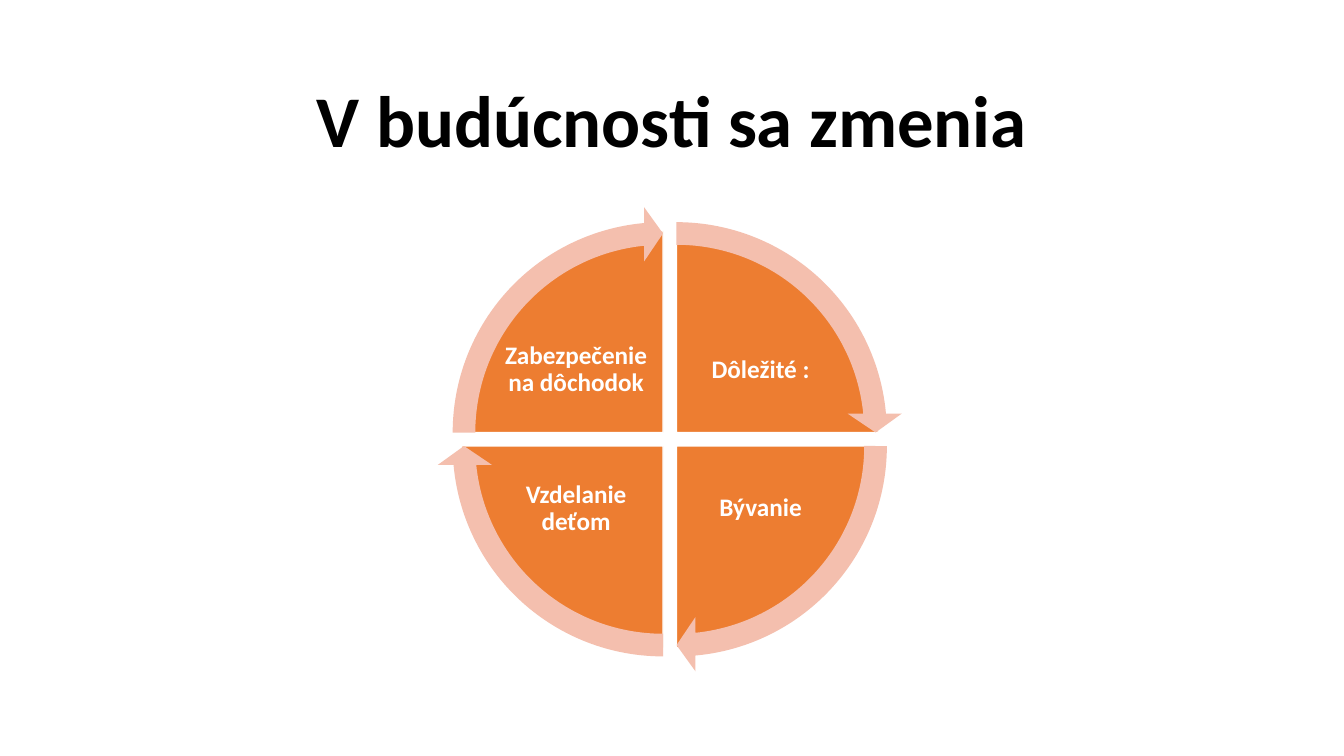
"""Builds a slide with a four-part cycle of future needs."""
from pptx import Presentation
from pptx import util as u
from pptx.dml.color import RGBColor
from pptx.enum import shapes, text

TITLE = "V budúcnosti sa zmenia"
QUARTERS = [
    ("Dôležité : ", 1, -1),
    ("Bývanie ", 1, 1),
    ("Vzdelanie deťom", -1, 1),
    ("Zabezpečenie na dôchodok", -1, -1),
]

FONT = "Calibri"
BLACK = RGBColor(0x00, 0x00, 0x00)
WHITE = RGBColor(0xFF, 0xFF, 0xFF)
ORANGE = RGBColor(0xED, 0x7D, 0x31)
PEACH = RGBColor(0xF4, 0xBF, 0xAE)

CENTER_X, CENTER_Y = 16.88, 11.07
GAP = 0.17
PIE_SIZE, ARROW_SIZE = 10.16, 11.4
LABEL_WIDTH, LABEL_HEIGHT = 3.76, 2.77
LABEL_DX, LABEL_DY = 2.36, 1.75
LABEL_INSET = 0.08
FULL_TURN, QUARTER_TURN, TOP = 216, 54, 162
ARROW_SWEEP = 50.72


def centered_box(x, y, width, height):
    return [u.Cm(v) for v in (x - width / 2, y - height / 2, width, height)]


def add_text(slide, box, wording, size, color, inset=None):
    frame = slide.shapes.add_textbox(*box).text_frame
    frame.word_wrap = True
    frame.vertical_anchor = text.MSO_ANCHOR.MIDDLE
    if inset is not None:
        frame.margin_left = frame.margin_right = u.Cm(inset)
        frame.margin_top = frame.margin_bottom = u.Cm(inset)
    paragraph = frame.paragraphs[0]
    paragraph.alignment = text.PP_ALIGN.CENTER
    paragraph.line_spacing = 0.9
    run = paragraph.add_run()
    run.text = wording
    run.font.name = FONT
    run.font.size = u.Pt(size)
    run.font.bold = True
    run.font.color.rgb = color


def add_round(slide, kind, x, y, size, color, adjustments):
    shape = slide.shapes.add_shape(kind, *centered_box(x, y, size, size))
    shape.shadow.inherit = False
    shape.fill.solid()
    shape.fill.fore_color.rgb = color
    for index, value in enumerate(adjustments):
        shape.adjustments[index] = value
    return shape


def main():
    presentation = Presentation()
    presentation.slide_width, presentation.slide_height = u.Cm(33.87), u.Cm(19.05)
    slide = presentation.slides.add_slide(presentation.slide_layouts[6])
    title_box = [u.Cm(v) for v in (2.33, 1.55, 29.21, 3.15)]
    add_text(slide, title_box, TITLE, 52, BLACK)

    arrows = []
    for index, (label, side_x, side_y) in enumerate(QUARTERS):
        start = (TOP + index * QUARTER_TURN) % FULL_TURN
        end = (start + QUARTER_TURN) % FULL_TURN
        x, y = CENTER_X + side_x * GAP, CENTER_Y + side_y * GAP
        pie = add_round(slide, shapes.MSO_SHAPE.PIE, x, y, PIE_SIZE, ORANGE, (start, end))
        pie.line.color.rgb = WHITE
        pie.line.width = u.Pt(1)
        label_box = centered_box(CENTER_X + side_x * LABEL_DX, CENTER_Y + side_y * LABEL_DY,
                                 LABEL_WIDTH, LABEL_HEIGHT)
        add_text(slide, label_box, label, 18, WHITE, LABEL_INSET)
        arrows.append((x, y, start))

    for x, y, start in arrows:
        arrow = add_round(slide, shapes.MSO_SHAPE.CIRCULAR_ARROW, x, y, ARROW_SIZE, PEACH,
                          (0.05, 3.28, start + ARROW_SWEEP, start, 0.06))
        arrow.line.fill.background()

    presentation.save("out.pptx")


if __name__ == "__main__":
    main()
